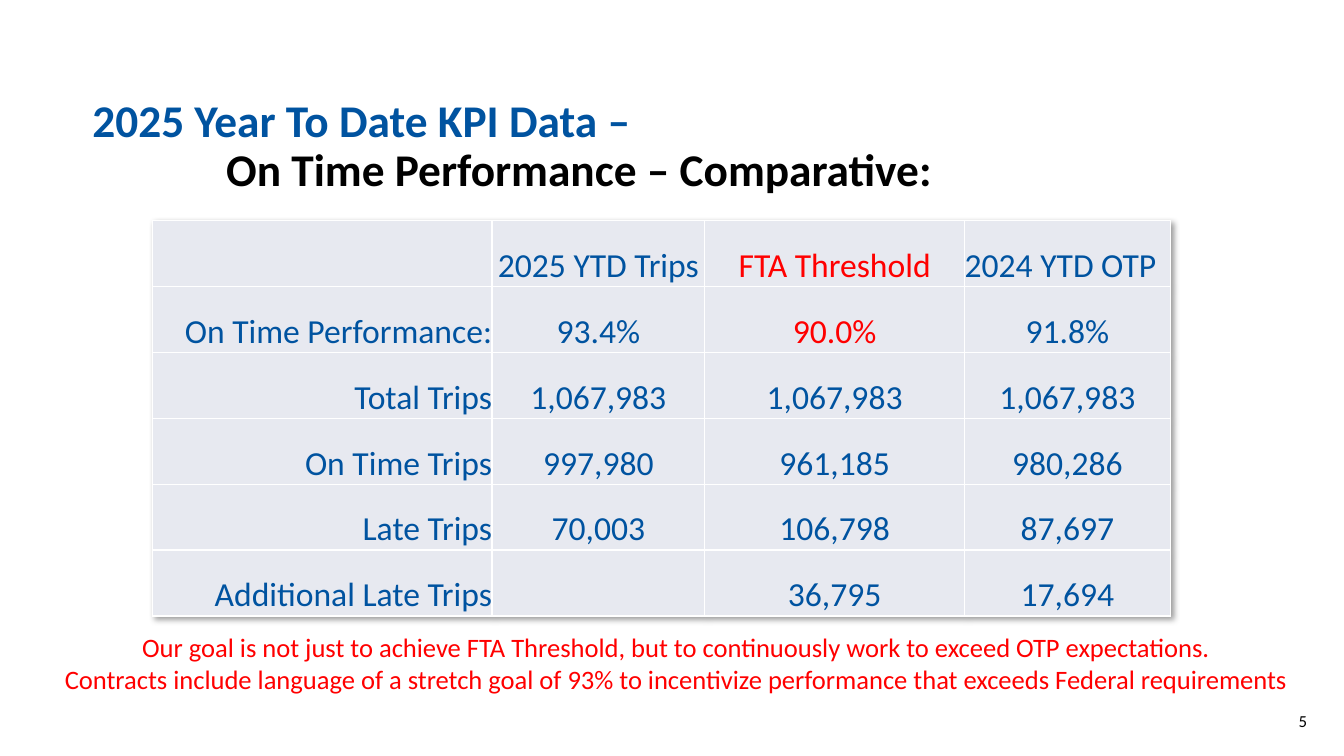
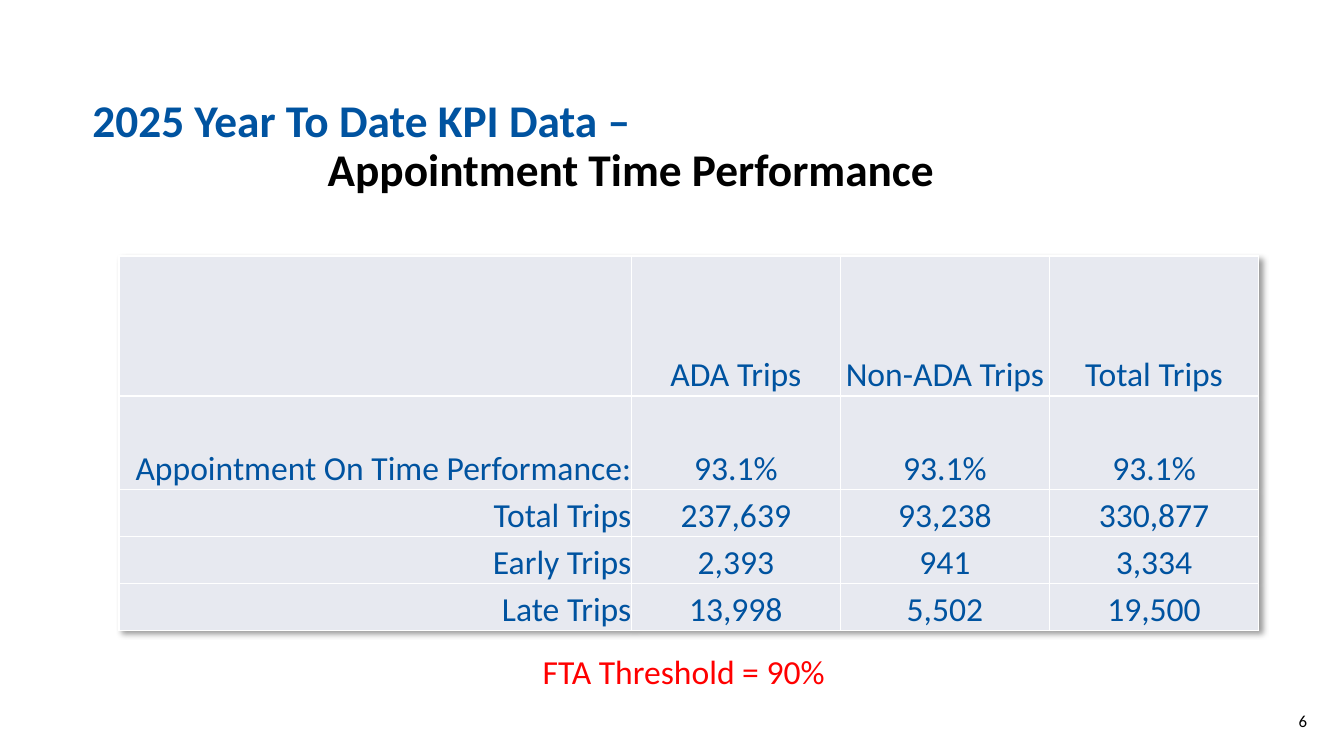
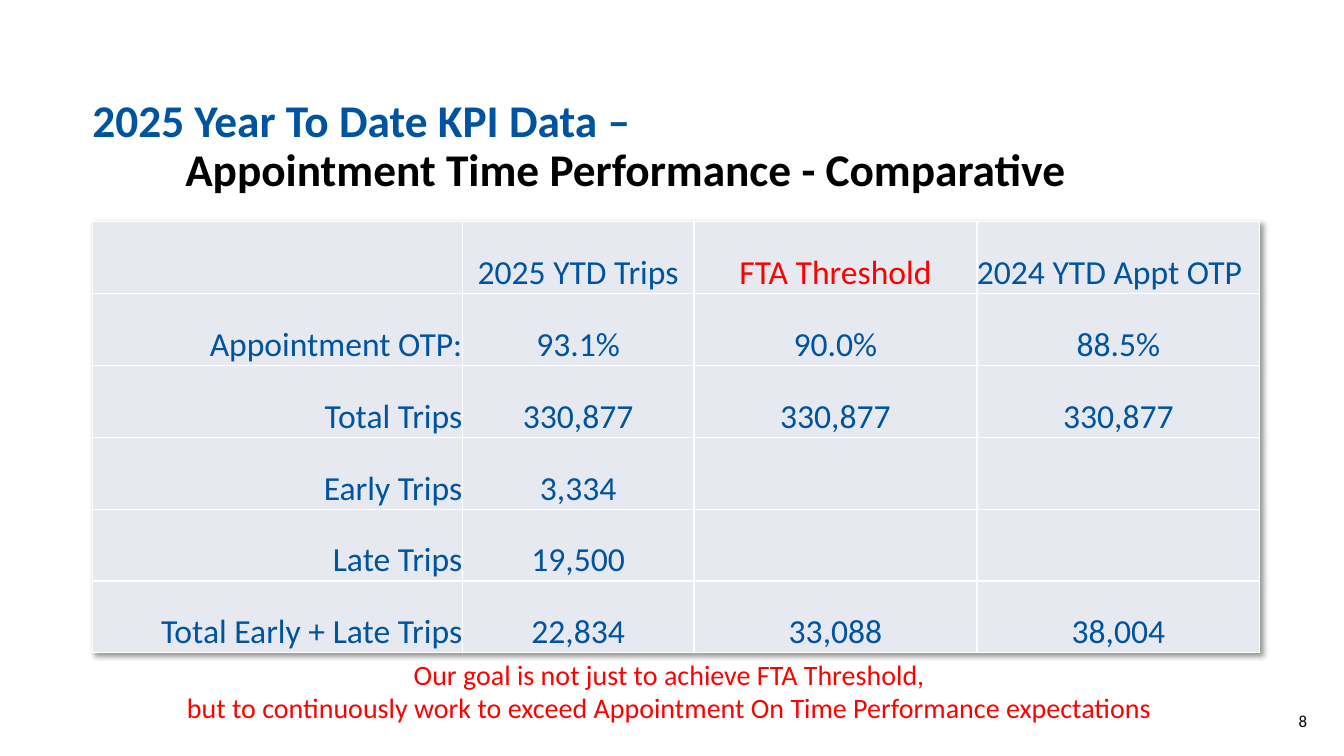
import pptx
import pptx.util
import pptx.dml.color
import pptx.enum.text
import pptx.oxml
import pptx.oxml.ns

Cm = pptx.util.Cm
Pt = pptx.util.Pt
ALIGN = pptx.enum.text.PP_ALIGN
ANCHOR = pptx.enum.text.MSO_ANCHOR

FONT = "Calibri"
COLOURS = {"blue": "0053A0", "black": "000000", "red": "FF0000", "cell": "E7E9F0", "border": "FFFFFF"}
HEADING = "2025 Year To Date KPI Data –"

SLIDES = [
    {
        "number": "5",
        "subtitle": "On Time Performance – Comparative:",
        "indent": 3.37,
        "table_at": (3.84, 5.56),
        "columns": [8.56, 5.36, 6.55, 5.18],
        "rows": [1.66] * 6,
        "cells": [
            ["", "2025 YTD Trips", "FTA Threshold", "2024 YTD OTP"],
            ["On Time Performance:", "93.4%", "90.0%", "91.8%"],
            ["Total Trips", "1,067,983", "1,067,983", "1,067,983"],
            ["On Time Trips", "997,980", "961,185", "980,286"],
            ["Late Trips", "70,003", "106,798", "87,697"],
            ["Additional Late Trips", "", "36,795", "17,694"],
        ],
        "red_cells": {(0, 2), (1, 2)},
        "left_cells": {(0, 3)},
        "note": [
            "Our goal is not just to achieve FTA Threshold, but to continuously work to exceed OTP expectations.",
            "Contracts include language of a stretch goal of 93% to incentivize performance that exceeds Federal requirements",
        ],
        "note_box": (1.02, 15.77, 32.03, 1.88),
        "note_size": 19,
    },
    {
        "number": "6",
        "subtitle": "Appointment Time Performance",
        "indent": 5.93,
        "table_at": (3, 6.45),
        "columns": [12.91, 5.27, 5.27, 5.27],
        "rows": [3.53, 2.36, 1.18, 1.18, 1.18],
        "cells": [
            ["", "ADA Trips", "Non-ADA Trips", "Total Trips"],
            ["Appointment On Time Performance:", "93.1%", "93.1%", "93.1%"],
            ["Total Trips", "237,639", "93,238", "330,877"],
            ["Early Trips", "2,393", "941", "3,334"],
            ["Late Trips", "13,998", "5,502", "19,500"],
        ],
        "red_cells": set(),
        "left_cells": set(),
        "note": ["FTA Threshold = 90%"],
        "note_box": (5.38, 16.26, 23.7, 1.27),
        "note_size": 24,
    },
    {
        "number": "8",
        "subtitle": "Appointment Time Performance - Comparative",
        "indent": 2.34,
        "table_at": (2.33, 5.59),
        "columns": [9.32, 5.84, 7.13, 7.13],
        "rows": [1.81] * 6,
        "cells": [
            ["", "2025 YTD Trips", "FTA Threshold", "2024 YTD Appt OTP"],
            ["Appointment OTP:", "93.1%", "90.0%", "88.5%"],
            ["Total Trips", "330,877", "330,877", "330,877"],
            ["Early Trips", "3,334", "", ""],
            ["Late Trips", "19,500", "", ""],
            ["Total Early + Late Trips", "22,834", "33,088", "38,004"],
        ],
        "red_cells": {(0, 2)},
        "left_cells": {(0, 3)},
        "note": [
            "Our goal is not just to achieve FTA Threshold,",
            "but to continuously work to exceed Appointment On Time Performance expectations",
        ],
        "note_box": (4.04, 16.43, 25.65, 1.96),
        "note_size": 20,
    },
]


def rgb(name):
    return pptx.dml.color.RGBColor.from_string(COLOURS[name])


def parse_drawing(xml):
    return pptx.oxml.parse_xml(xml.replace(">", f" {pptx.oxml.ns.nsdecls('a')}>", 1))


def style_paragraph(paragraph, size, colour, alignment=ALIGN.LEFT, bold=False):
    paragraph.alignment = alignment
    font = paragraph.font
    font.name, font.size, font.bold = FONT, Pt(size), bold
    font.color.rgb = rgb(colour)
    for run in paragraph.runs:
        run.font.name, run.font.size, run.font.bold = FONT, Pt(size), bold
        run.font.color.rgb = rgb(colour)


def set_margins(target, left, top, right, bottom):
    target.margin_left, target.margin_top = Cm(left), Cm(top)
    target.margin_right, target.margin_bottom = Cm(right), Cm(bottom)


def add_text(slide, box, lines, margins=(0.25, 0.13, 0.25, 0.13), anchor=ANCHOR.TOP):
    text_frame = slide.shapes.add_textbox(*map(Cm, box)).text_frame
    text_frame.word_wrap = True
    text_frame.vertical_anchor = anchor
    set_margins(text_frame, *margins)
    text_frame.text = "\n".join(lines)
    return text_frame.paragraphs


def add_title(slide, subtitle, indent):
    paragraphs = add_text(slide, (2.33, 1.7, 29.39, 3.38), [HEADING, subtitle], (0, 1.02, 0, 0.13), ANCHOR.BOTTOM)
    for paragraph, colour in zip(paragraphs, ("blue", "black")):
        paragraph.line_spacing = 0.9
        style_paragraph(paragraph, 32.4, colour, bold=True)
    properties = paragraphs[1]._p.get_or_add_pPr()
    properties.set("marL", str(Cm(indent)))
    properties.set("indent", "0")


def add_borders(cell):
    properties = cell._tc.get_or_add_tcPr()
    for position, side in enumerate(("lnL", "lnR", "lnT", "lnB")):
        properties.insert(position, parse_drawing(
            f'<a:{side} w="{Pt(1)}"><a:solidFill><a:srgbClr val="{COLOURS["border"]}"/></a:solidFill></a:{side}>'))


def add_shadow(table):
    table._tbl.tblPr.insert(0, parse_drawing(
        f'<a:effectLst><a:outerShdw blurRad="{Pt(4)}" dist="{Pt(3)}" dir="2700000" algn="tl" rotWithShape="0">'
        f'<a:srgbClr val="{COLOURS["black"]}"><a:alpha val="40000"/></a:srgbClr></a:outerShdw></a:effectLst>'))


def add_trip_table(slide, content):
    columns, rows = content["columns"], content["rows"]
    box = (*content["table_at"], sum(columns), sum(rows))
    table = slide.shapes.add_table(len(rows), len(columns), *map(Cm, box)).table
    table.first_row = table.horz_banding = False
    add_shadow(table)
    for column, width in zip(table.columns, columns):
        column.width = Cm(width)
    for row, height in zip(table.rows, rows):
        row.height = Cm(height)
    for row_index, texts in enumerate(content["cells"]):
        for column_index, text in enumerate(texts):
            place = (row_index, column_index)
            cell = table.cell(*place)
            cell.fill.solid()
            cell.fill.fore_color.rgb = rgb("cell")
            add_borders(cell)
            cell.vertical_anchor = ANCHOR.BOTTOM
            set_margins(cell, 0, 0, 0, 0)
            cell.text_frame.text = text
            alignment = ALIGN.RIGHT if column_index == 0 else ALIGN.CENTER
            if place in content["left_cells"]:
                alignment = ALIGN.LEFT
            colour = "red" if place in content["red_cells"] else "blue"
            style_paragraph(cell.text_frame.paragraphs[0], 24, colour, alignment)


def main():
    presentation = pptx.Presentation()
    presentation.slide_width, presentation.slide_height = Cm(33.87), Cm(19.05)
    for content in SLIDES:
        slide = presentation.slides.add_slide(presentation.slide_layouts[6])
        add_title(slide, content["subtitle"], content["indent"])
        number = add_text(slide, (28.88, 17.65, 4.06, 1.02), [content["number"]], (0.25, 0.13, 0, 0.13), ANCHOR.MIDDLE)
        style_paragraph(number[0], 12, "black", ALIGN.RIGHT)
        add_trip_table(slide, content)
        for paragraph in add_text(slide, content["note_box"], content["note"]):
            style_paragraph(paragraph, content["note_size"], "red", ALIGN.CENTER)
    presentation.save("out.pptx")


if __name__ == "__main__":
    main()
